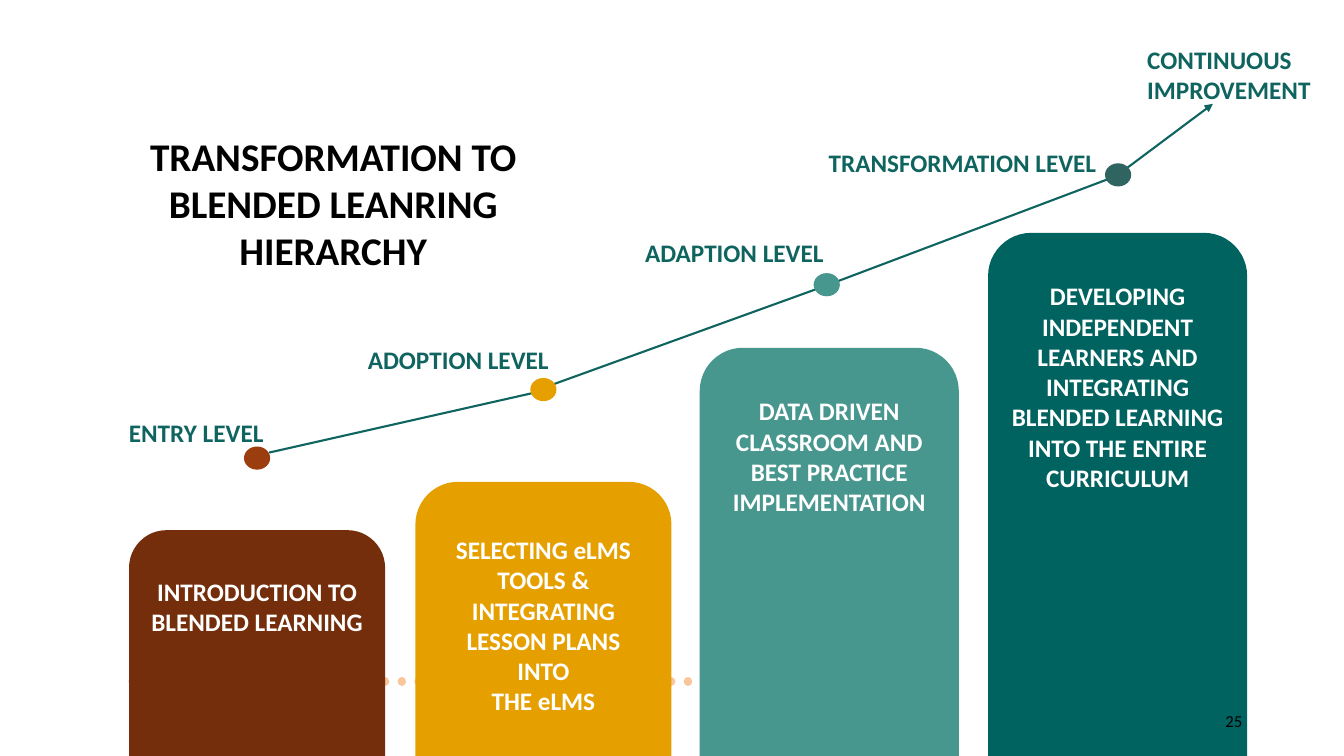
"""Build the slide on the transformation to blended learning hierarchy."""

from dataclasses import dataclass

from lxml.etree import SubElement
from pptx import Presentation
from pptx.dml.color import RGBColor
from pptx.enum.dml import MSO_LINE
from pptx.enum.shapes import MSO_CONNECTOR, MSO_SHAPE
from pptx.enum.text import MSO_ANCHOR, MSO_AUTO_SIZE, PP_ALIGN
from pptx.oxml.ns import qn
from pptx.shapes.autoshape import Shape
from pptx.slide import Slide
from pptx.text.text import TextFrame
from pptx.util import Inches, Pt


@dataclass(frozen=True)
class Theme:
    """Colours, font and type sizes."""

    font: str = "Calibri"
    black: str = "000000"
    white: str = "FFFFFF"
    teal: str = "0F6460"
    peach: str = "F9C59B"
    title: int = 28
    body: int = 18
    small: int = 12


@dataclass(frozen=True)
class Box:
    """A rectangle in inches."""

    left: float
    top: float
    width: float
    height: float


@dataclass(frozen=True)
class Level:
    """One step: its bar, its dot and its label."""

    name: str
    label: Box
    dot: tuple[float, float]
    dye: str
    left: float
    top: float
    width: float
    fill: str
    text: str
    inset: float = 0.35
    anchor: MSO_ANCHOR = MSO_ANCHOR.TOP


@dataclass(frozen=True)
class Line:
    """A straight line between two points."""

    start: tuple[float, float]
    end: tuple[float, float]
    color: str
    weight: float = 1.5
    arrow: bool = False
    dotted: bool = False


THEME = Theme()
WIDE, TALL = 13.33, 7.5
DOT = (0.26, 0.23)

LEVELS = [
    Level("ENTRY LEVEL", Box(1.18, 4.09, 3, 0.4), (2.42, 4.43), "9C3D10",
          1.28, 5.26, 2.54, "752E0C", "INTRODUCTION TO BLENDED LEARNING"),
    Level("ADOPTION LEVEL", Box(3.55, 3.37, 3, 0.4), (5.26, 3.75), "E5A000",
          4.12, 4.78, 2.54, "E5A000",
          "SELECTING eLMS TOOLS & INTEGRATING LESSON PLANS INTO\nTHE eLMS",
          0.05, MSO_ANCHOR.MIDDLE),
    Level("ADAPTION LEVEL", Box(6.3, 2.31, 3, 0.4), (8.07, 2.71), "48978F",
          6.94, 3.45, 2.57, "48978F",
          "DATA DRIVEN CLASSROOM AND BEST PRACTICE\nIMPLEMENTATION"),
    Level("TRANSFORMATION LEVEL", Box(8.12, 1.41, 2.88, 0.4), (10.96, 1.62), "306460",
          9.8, 2.31, 2.57, "006360",
          "DEVELOPING INDEPENDENT LEARNERS AND INTEGRATING "
          "BLENDED LEARNING INTO THE ENTIRE CURRICULUM"),
]

BASE = Line((8.66, 6.76), (1.28, 6.76), THEME.peach, 6, dotted=True)
TREND = [
    Line((2.67, 4.49), (5.37, 3.88), THEME.teal),
    Line((5.44, 3.83), (8.12, 2.86), THEME.teal),
    Line((8.23, 2.82), (11.01, 1.77), THEME.teal),
    Line((11.16, 1.68), (12.03, 1.03), THEME.teal, arrow=True),
]


def write(frame: TextFrame, text: str, size: int, color: str,
          align: PP_ALIGN = PP_ALIGN.LEFT, bold: bool = True) -> None:
    """Fill a text frame and format its runs."""
    frame.text = text
    frame.word_wrap = True
    for para in frame.paragraphs:
        para.alignment = align
        for run in para.runs:
            run.font.name = THEME.font
            run.font.size = Pt(size)
            run.font.bold = bold
            run.font.color.rgb = RGBColor.from_string(color)


def place(shape: Shape, box: Box) -> None:
    """Move and size a shape."""
    shape.left, shape.top = Inches(box.left), Inches(box.top)
    shape.width, shape.height = Inches(box.width), Inches(box.height)


def add_form(slide: Slide, kind: MSO_SHAPE, box: Box, fill: str) -> Shape:
    """Add a flat filled shape."""
    shape = slide.shapes.add_shape(kind, 0, 0, 0, 0)
    place(shape, box)
    shape.shadow.inherit = False
    shape.fill.solid()
    shape.fill.fore_color.rgb = RGBColor.from_string(fill)
    shape.line.fill.background()
    return shape


def add_bar(slide: Slide, level: Level) -> None:
    """Add the bar of a level, standing on the foot of the slide."""
    box = Box(level.left, level.top, level.width, TALL - level.top)
    bar = add_form(slide, MSO_SHAPE.ROUND_2_SAME_RECTANGLE, box, level.fill)
    frame = bar.text_frame
    frame.margin_top = Inches(level.inset)
    frame.vertical_anchor = level.anchor
    write(frame, level.text, THEME.body, THEME.white, PP_ALIGN.CENTER)


def add_line(slide: Slide, line: Line) -> None:
    """Add a straight line, dotted or with an arrowhead if asked."""
    ends = [Inches(value) for value in (*line.start, *line.end)]
    link = slide.shapes.add_connector(MSO_CONNECTOR.STRAIGHT, *ends)
    link.line.color.rgb = RGBColor.from_string(line.color)
    link.line.width = Pt(line.weight)
    stroke = link.line._get_or_add_ln()
    if line.dotted:
        link.line.dash_style = MSO_LINE.ROUND_DOT
        stroke.set("cap", "rnd")
    if line.arrow:
        SubElement(stroke, qn("a:tailEnd")).set("type", "triangle")
    SubElement(link._element.spPr, qn("a:effectLst"))


def add_label(slide: Slide, text: str, box: Box) -> None:
    """Add a bold teal label."""
    label = slide.shapes.add_textbox(0, 0, 0, 0)
    place(label, box)
    write(label.text_frame, text, THEME.body, THEME.teal)


def add_title(slide: Slide) -> None:
    """Place and format the title."""
    title = slide.shapes.title
    place(title, Box(1.18, 1.26, 4.25, 1.51))
    frame = title.text_frame
    write(frame, "TRANSFORMATION TO BLENDED LEANRING HIERARCHY",
          THEME.title, THEME.black, PP_ALIGN.CENTER)
    frame.auto_size = MSO_AUTO_SIZE.NONE
    frame.vertical_anchor = MSO_ANCHOR.TOP


def add_page(slide: Slide) -> None:
    """Add the page number."""
    page = slide.shapes.add_textbox(0, 0, 0, 0)
    place(page, Box(9.42, 6.95, 3, 0.4))
    write(page.text_frame, "25", THEME.small, THEME.black, PP_ALIGN.RIGHT, False)
    page.text_frame.vertical_anchor = MSO_ANCHOR.MIDDLE


def main() -> None:
    """Build and save the slide."""
    deck = Presentation()
    deck.slide_width, deck.slide_height = Inches(WIDE), Inches(TALL)
    slide = deck.slides.add_slide(deck.slide_layouts[5])
    add_title(slide)
    add_line(slide, BASE)
    for level in LEVELS:
        add_bar(slide, level)
    for line in TREND:
        add_line(slide, line)
    for level in LEVELS:
        add_form(slide, MSO_SHAPE.OVAL, Box(*level.dot, *DOT), level.dye)
        add_label(slide, level.name, level.label)
    add_label(slide, "CONTINUOUS IMPROVEMENT", Box(11.28, 0.39, 2.05, 0.71))
    add_page(slide)
    deck.save("out.pptx")


if __name__ == "__main__":
    main()
